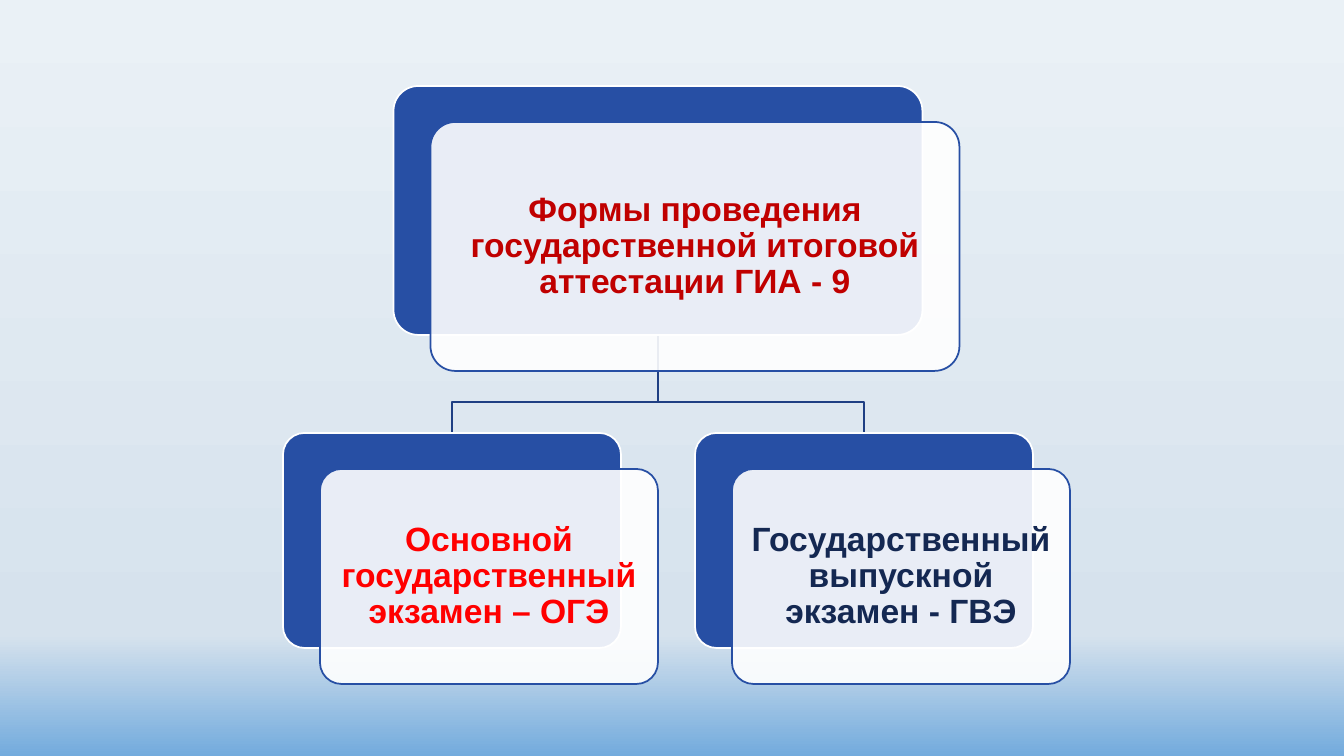
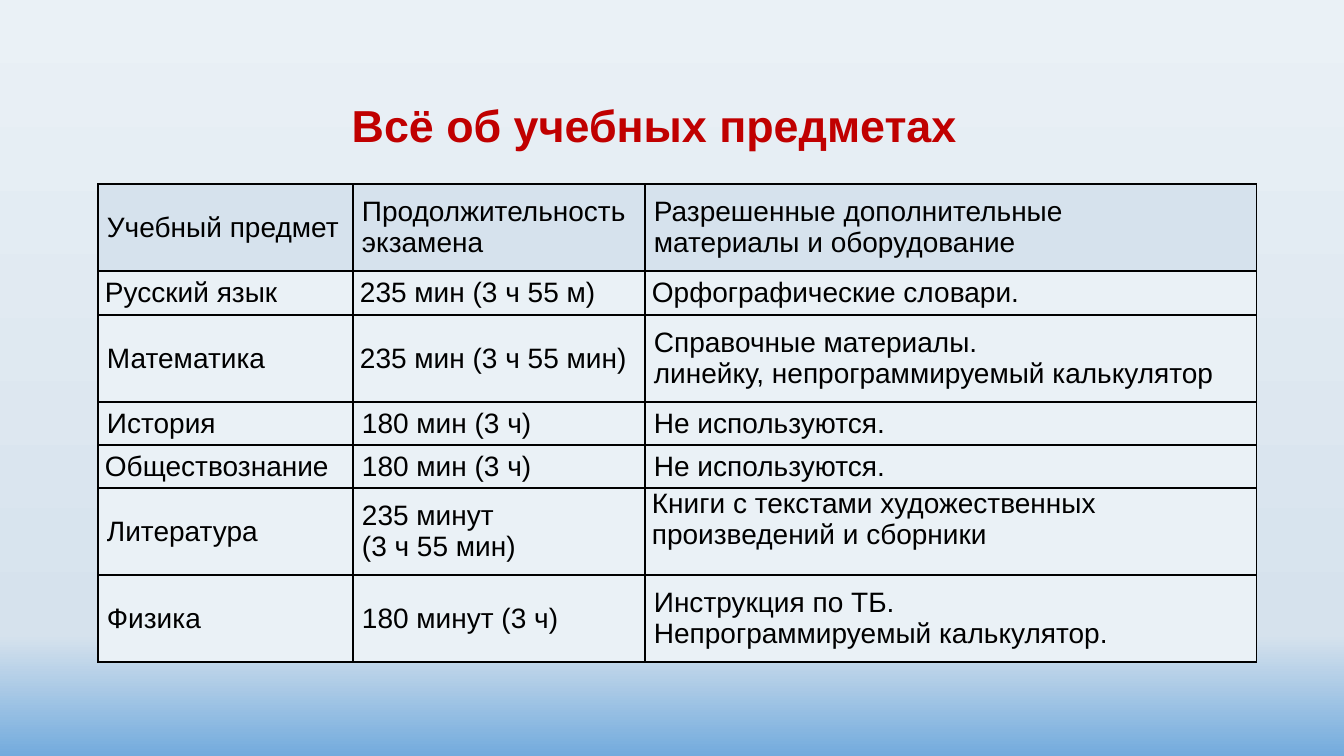
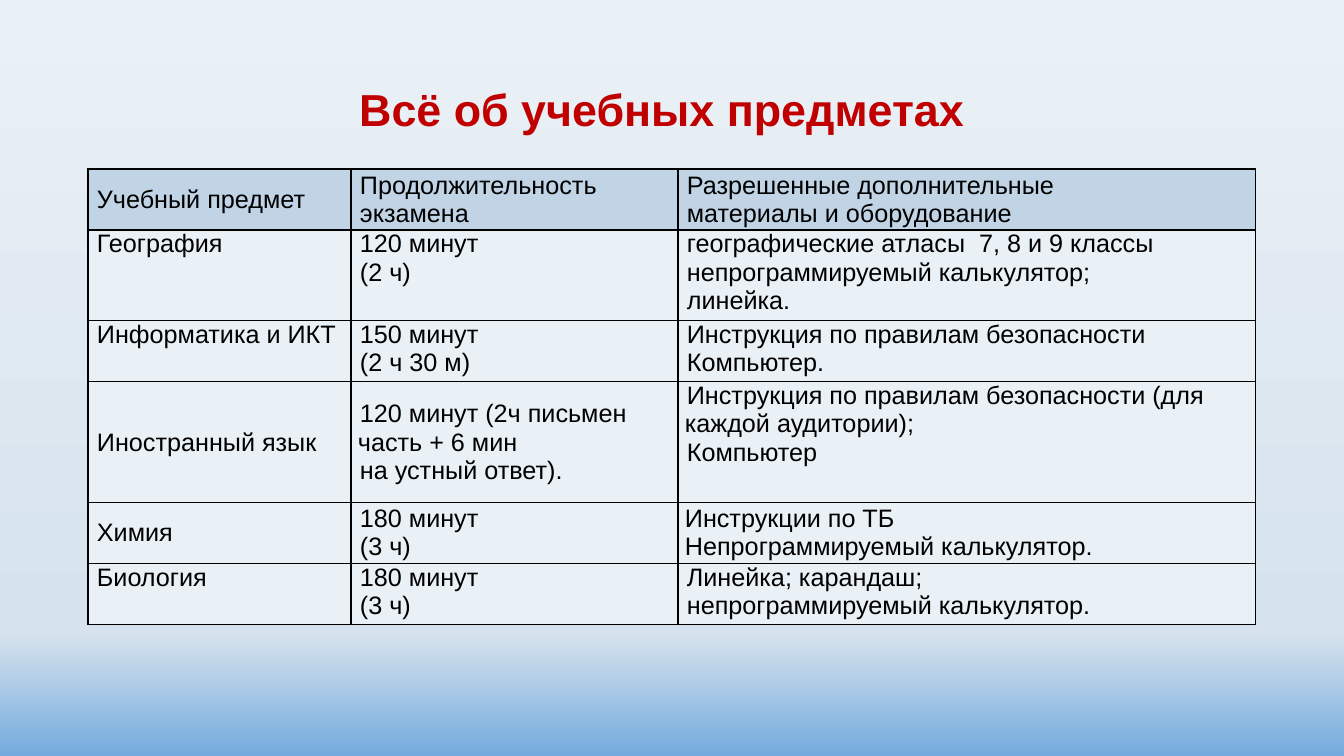
"""Three slides on the forms, subjects and timing of the GIA-9 exams."""
import copy
import dataclasses

import lxml.etree
import pptx
import pptx.dml.color
import pptx.enum.shapes
import pptx.enum.text
import pptx.oxml.ns
import pptx.util

EMU = 914400 / 100.8
SLIDE = (1344, 756)


@dataclasses.dataclass(frozen=True)
class Theme:
    font: str = "Arial"
    title: str = "C00000"
    accent: str = "FF0000"
    navy: str = "142852"
    box: str = "274FA4"
    link: str = "1F3F83"
    white: str = "FFFFFF"
    ink: str = "000000"
    cell: str = "EAF1F6"
    backdrop: tuple = ((0, "EAF1F6"), (0.84, "D6E2ED"), (1, "73ABDD"))
    title_size: int = 32
    box_size: int = 24
    line: float = 1.25
    border: int = 1
    box_alpha: int = 90


THEME = Theme()

TREE = {
    "axis": 658,
    "shift": (37, 36),
    "inset": 4,
    "elbow": 402,
    "root": {"text": "Формы проведения государственной итоговой аттестации ГИА - 9",
             "color": THEME.title, "top": 86, "size": (529, 249)},
    "branch": {"top": 433, "size": (338, 215), "stride": 412},
    "branches": [
        ("Основной государственный экзамен – ОГЭ", THEME.accent),
        ("Государственный выпускной экзамен - ГВЭ", THEME.navy),
    ],
}

TITLE = "Всё об учебных предметах"
HEADER = ("Учебный предмет", "Продолжительность\nэкзамена",
          "Разрешенные дополнительные\nматериалы и оборудование")
CELL_INSET = 7
FIRST_INDENT = 2

SUBJECT_TABLES = [
    {
        "title_box": (88, 93, 1133, 65),
        "origin": (98, 184),
        "cols": (255, 292, 612),
        "rows": (87, 44, 87, 43, 43, 87, 87),
        "size": 20,
        "header_fill": "D6E2ED",
        "flush": {(1, 0), (1, 1), (1, 2), (2, 1), (4, 0), (5, 2)},
        "top": {(5, 2)},
        "subjects": [
            ("Русский язык", "235 мин (3 ч 55 м)", "Орфографические словари."),
            ("Математика", "235 мин (3 ч 55 мин)",
             "Справочные материалы.\nлинейку, непрограммируемый калькулятор"),
            ("История", "180 мин (3 ч)", "Не используются."),
            ("Обществознание", "180 мин (3 ч)", "Не используются."),
            ("Литература", "235 минут\n(3 ч 55 мин)",
             "Книги с текстами художественных произведений и сборники"),
            ("Физика", "180 минут (3 ч)",
             "Инструкция по ТБ.\nНепрограммируемый калькулятор."),
        ],
    },
    {
        "title_box": (78, 77, 1168, 65),
        "origin": (88, 169),
        "cols": (263, 327, 578),
        "rows": (61, 90, 61, 121, 60, 61),
        "size": 18,
        "header_fill": "C1D4E5",
        "flush": {(4, 2)},
        "top": {(1, 0), (1, 1), (1, 2), (2, 0), (2, 1), (2, 2),
                (3, 2), (5, 0), (5, 1), (5, 2)},
        "subjects": [
            ("География", "120 минут\n(2 ч)",
             "географические атласы  7, 8 и 9 классы\n"
             "непрограммируемый калькулятор;\nлинейка."),
            ("Информатика и ИКТ", "150 минут\n(2 ч 30 м)",
             "Инструкция по правилам безопасности\nКомпьютер."),
            ("Иностранный язык",
             "120 минут (2ч письмен часть + 6 мин\nна устный ответ).",
             "Инструкция по правилам безопасности (для каждой аудитории);\nКомпьютер"),
            ("Химия", "180 минут\n(3 ч)",
             "Инструкции по ТБ\nНепрограммируемый калькулятор."),
            ("Биология", "180 минут\n(3 ч)",
             "Линейка; карандаш;\nнепрограммируемый калькулятор."),
        ],
    },
]


def px(n):
    return pptx.util.Emu(round(n * EMU))


def rgb(value):
    return pptx.dml.color.RGBColor.from_string(value)


def qn(tag):
    return pptx.oxml.ns.qn(tag)


def style_font(p, size, color, bold=False):
    p.font.name = THEME.font
    p.font.size = pptx.util.Pt(size)
    p.font.bold = bold
    p.font.color.rgb = rgb(color)


def set_margins(target, x, y):
    target.margin_left = target.margin_right = px(x)
    target.margin_top = target.margin_bottom = px(y)


def set_line(shape, color):
    shape.line.color.rgb = rgb(color)
    shape.line.width = pptx.util.Pt(THEME.line)


def paint_background(master):
    fill = master.background.fill
    fill.gradient()
    fill.gradient_angle = 270
    stops = master.element.find(".//" + qn("a:gsLst"))
    stops.insert(0, copy.deepcopy(stops[0]))
    for stop, (position, color) in zip(fill.gradient_stops, THEME.backdrop):
        stop.position = position
        stop.color.rgb = rgb(color)


def add_box(s, left, top, size, fill, line):
    kind = pptx.enum.shapes.MSO_SHAPE.ROUNDED_RECTANGLE
    box = s.shapes.add_shape(kind, px(left), px(top), *map(px, size))
    box.adjustments[0] = 0.1
    box.shadow.inherit = False
    box.fill.solid()
    box.fill.fore_color.rgb = rgb(fill)
    set_line(box, line)
    return box


def add_node(s, center, top, size, text, color):
    left = center - size[0] / 2
    dx, dy = TREE["shift"]
    add_box(s, left, top, size, THEME.box, THEME.white)
    card = add_box(s, left + dx, top + dy, size, THEME.white, THEME.box)
    white = card.fill._xPr.find(qn("a:solidFill"))[0]
    lxml.etree.SubElement(white, qn("a:alpha"), val=str(THEME.box_alpha * 1000))
    tf = card.text_frame
    tf.word_wrap = True
    tf.vertical_anchor = pptx.enum.text.MSO_ANCHOR.MIDDLE
    set_margins(tf, TREE["inset"], TREE["inset"])
    p = tf.paragraphs[0]
    p.text = text
    p.alignment = pptx.enum.text.PP_ALIGN.CENTER
    p.line_spacing = 0.9
    style_font(p, THEME.box_size, color, True)


def add_elbow(s, start, end):
    bend = TREE["elbow"]
    path = s.shapes.build_freeform(*start, scale=EMU)
    path.add_line_segments([(start[0], bend), (end[0], bend), end], close=False)
    elbow = path.convert_to_shape()
    elbow.shadow.inherit = False
    elbow.fill.background()
    set_line(elbow, THEME.link)


def build_tree(prs):
    s = prs.slides.add_slide(prs.slide_layouts[6])
    axis, root, branch = TREE["axis"], TREE["root"], TREE["branch"]
    middle = (len(TREE["branches"]) - 1) / 2
    centers = [round(axis + (i - middle) * branch["stride"])
               for i in range(len(TREE["branches"]))]
    for center in centers:
        add_elbow(s, (axis, root["top"] + root["size"][1]), (center, branch["top"]))
    add_node(s, axis, root["top"], root["size"], root["text"], root["color"])
    for center, (text, color) in zip(centers, TREE["branches"]):
        add_node(s, center, branch["top"], branch["size"], text, color)


def set_title(s, box):
    title = s.shapes.title
    title.left, title.top, title.width, title.height = map(px, box)
    tf = title.text_frame
    tf.word_wrap = True
    tf.auto_size = pptx.enum.text.MSO_AUTO_SIZE.SHAPE_TO_FIT_TEXT
    tf.vertical_anchor = pptx.enum.text.MSO_ANCHOR.TOP
    p = tf.paragraphs[0]
    p.text = TITLE
    p.alignment = pptx.enum.text.PP_ALIGN.CENTER
    style_font(p, THEME.title_size, THEME.title, True)


def add_borders(cell):
    tc_pr = cell._tc.get_or_add_tcPr()
    for side in ("a:lnL", "a:lnR", "a:lnT", "a:lnB"):
        ln = lxml.etree.SubElement(tc_pr, qn(side), w=str(pptx.util.Pt(THEME.border)))
        solid = lxml.etree.SubElement(ln, qn("a:solidFill"))
        lxml.etree.SubElement(solid, qn("a:srgbClr"), val=THEME.ink)


def fill_cell(cell, text, size, fill, indent, anchor):
    add_borders(cell)
    cell.fill.solid()
    cell.fill.fore_color.rgb = rgb(fill)
    cell.vertical_anchor = anchor
    set_margins(cell, CELL_INSET, 0)
    cell.text_frame.text = text
    for p in cell.text_frame.paragraphs:
        p_pr = p._p.get_or_add_pPr()
        p_pr.set("marL", "0")
        p_pr.set("indent", str(px(indent)))
        style_font(p, size, THEME.ink)


def build_subjects(prs, data):
    s = prs.slides.add_slide(prs.slide_layouts[5])
    set_title(s, data["title_box"])
    cols, rows = data["cols"], data["rows"]
    frame = s.shapes.add_table(len(rows), len(cols), *map(px, data["origin"]),
                               px(sum(cols)), px(sum(rows)))
    table = frame.table
    table.first_row = table.horz_banding = False
    for column, width in zip(table.columns, cols):
        column.width = px(width)
    for row, height in zip(table.rows, rows):
        row.height = px(height)
    anchors = pptx.enum.text.MSO_ANCHOR
    for r, texts in enumerate([HEADER, *data["subjects"]]):
        for c, text in enumerate(texts):
            fill_cell(table.cell(r, c), text, data["size"],
                      THEME.cell if r else data["header_fill"],
                      0 if (r, c) in data["flush"] else FIRST_INDENT,
                      anchors.TOP if (r, c) in data["top"] else anchors.MIDDLE)


def main():
    prs = pptx.Presentation()
    prs.slide_width, prs.slide_height = map(px, SLIDE)
    paint_background(prs.slide_master)
    build_tree(prs)
    for data in SUBJECT_TABLES:
        build_subjects(prs, data)
    prs.save("out.pptx")


if __name__ == "__main__":
    main()
